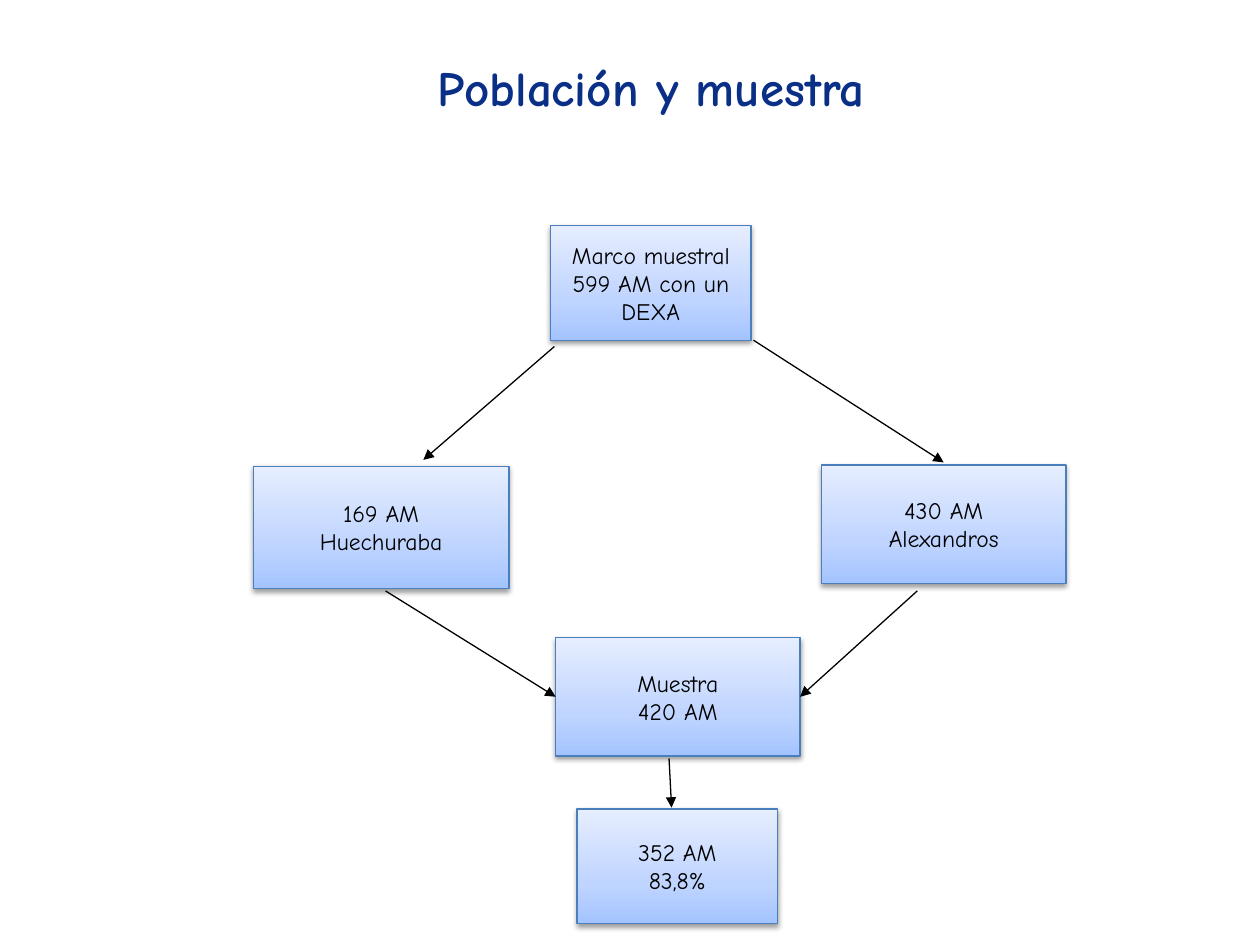
from copy import deepcopy

from pptx import Presentation
from pptx import util as u
from pptx.dml.color import RGBColor
from pptx.enum import shapes, text
from pptx.oxml import parse_xml
from pptx.oxml.ns import nsdecls, qn

FONT = "Comic Neue"
NAVY = RGBColor(0x0A, 0x2F, 0x87)
BLACK = RGBColor(0, 0, 0)
EDGE = RGBColor(0x4B, 0x7E, 0xBC)
GRADIENT = [
    (0, RGBColor(0xA4, 0xC4, 0xFF)),
    (0.35, RGBColor(0xBF, 0xD4, 0xFF)),
    (1, RGBColor(0xE6, 0xEE, 0xFF)),
]
WIDTH, HEIGHT = 10, 7.5
SMALL, LARGE, WIDE = (1.59, 0.91), (1.94, 0.94), (2.03, 0.97)

# left, top, (width, height), lines
BOXES = [
    (4.37, 1.79, SMALL, ["Marco muestral", "599 AM con un DEXA"]),
    (6.52, 3.69, LARGE, ["430 AM", "Alexandros"]),
    (2.01, 3.70, WIDE, ["169 AM", "Huechuraba"]),
    (4.41, 5.06, LARGE, ["Muestra", "420 AM"]),
    (4.58, 6.42, SMALL, ["352 AM", "83,8%"]),
]
# start x, start y, end x, end y
ARROWS = [
    (5.98, 2.70, 7.49, 3.67),
    (4.40, 2.75, 3.36, 3.65),
    (3.06, 4.69, 4.41, 5.53),
    (7.28, 4.69, 6.35, 5.53),
    (5.31, 6.02, 5.33, 6.41),
]


def write_lines(frame, lines, size, color, bold=False,
                anchor=text.MSO_ANCHOR.MIDDLE, wrap=True):
    frame.word_wrap = wrap
    frame.vertical_anchor = anchor
    for index, line in enumerate(lines):
        para = frame.add_paragraph() if index else frame.paragraphs[0]
        para.alignment = text.PP_ALIGN.CENTER
        span = para.add_run()
        span.text = line
        span.font.name = FONT
        span.font.size = u.Pt(size)
        span.font.bold = bold
        span.font.color.rgb = color


def fill_gradient(shape):
    """Shade the shape from its bottom edge to its top edge."""
    shape.fill.gradient()
    shape.fill.gradient_angle = 90
    stop_list = shape._element.spPr.find(qn("a:gradFill")).find(qn("a:gsLst"))
    stop_list.append(deepcopy(stop_list[0]))
    for stop, (position, color) in zip(shape.fill.gradient_stops, GRADIENT):
        stop.position = position
        stop.color.rgb = color


def add_shadow(shape):
    shape.shadow.inherit = False
    shape._element.spPr.find(qn("a:effectLst")).append(parse_xml(
        f'<a:outerShdw {nsdecls("a")} blurRad="{u.Pt(3.1)}" dist="{u.Pt(1.6)}" '
        'dir="5400000" rotWithShape="0"><a:srgbClr val="000000">'
        '<a:alpha val="38000"/></a:srgbClr></a:outerShdw>'))


def add_box(page, left, top, size, lines):
    box = page.shapes.add_shape(
        shapes.MSO_SHAPE.RECTANGLE, *map(u.Inches, (left, top, *size)))
    fill_gradient(box)
    box.line.color.rgb = EDGE
    box.line.width = u.Pt(0.75)
    add_shadow(box)
    write_lines(box.text_frame, lines, size=13.5, color=BLACK)


def add_arrow(page, *ends):
    arrow = page.shapes.add_connector(
        shapes.MSO_CONNECTOR.STRAIGHT, *map(u.Inches, ends))
    arrow.line.color.rgb = BLACK
    arrow.line.width = u.Pt(0.75)
    arrow.line._get_or_add_ln().append(
        parse_xml(f'<a:tailEnd {nsdecls("a")} type="triangle"/>'))
    arrow._element.spPr.append(parse_xml(f'<a:effectLst {nsdecls("a")}/>'))


def place_title(page, title):
    box = page.shapes.title
    box.left, box.top, box.width, box.height = map(
        u.Inches, (3.18, 0.41, 3.97, 0.57))
    write_lines(box.text_frame, [title], size=28, color=NAVY, bold=True,
                anchor=text.MSO_ANCHOR.TOP, wrap=False)


def main():
    deck = Presentation()
    deck.slide_width, deck.slide_height = u.Inches(WIDTH), u.Inches(HEIGHT)
    page = deck.slides.add_slide(deck.slide_layouts.get_by_name("Title Only"))
    place_title(page, "Población y muestra")
    for box in BOXES:
        add_box(page, *box)
    for ends in ARROWS:
        add_arrow(page, *ends)
    deck.save("out.pptx")


if __name__ == "__main__":
    main()
